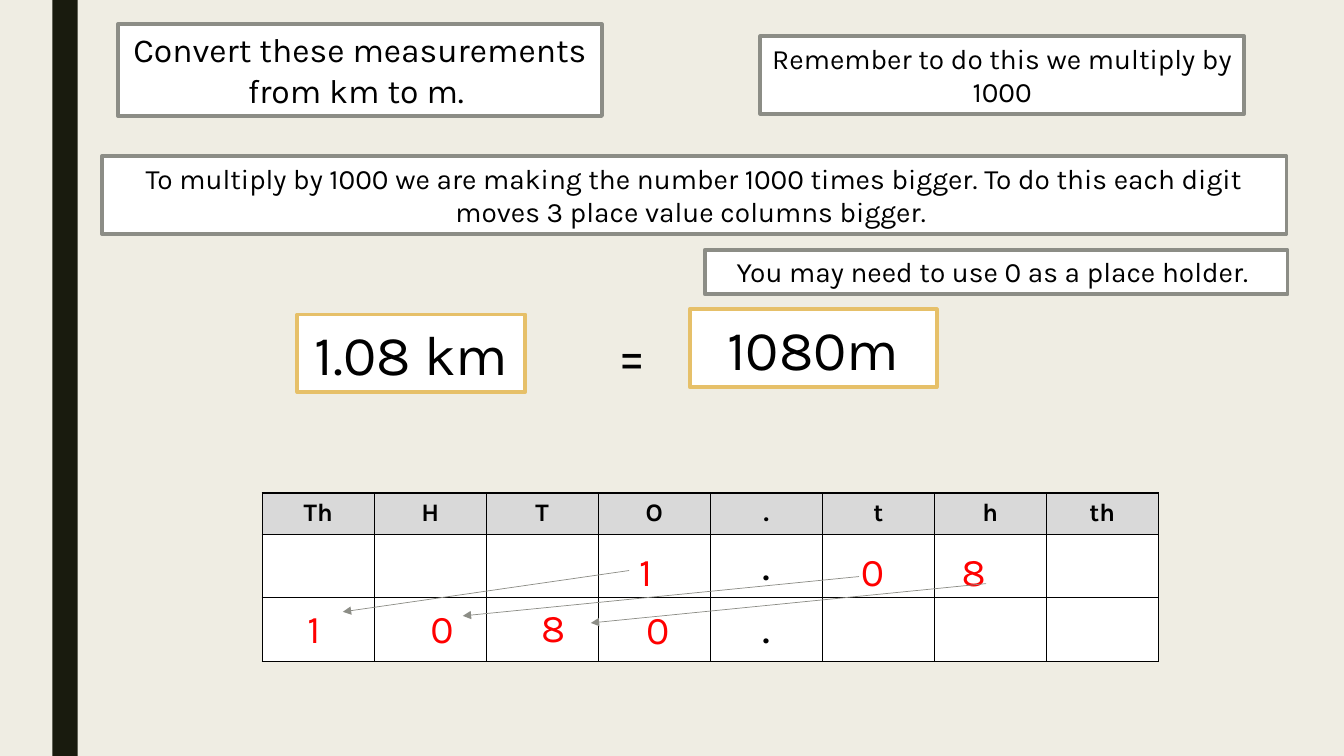
from dataclasses import dataclass

from pptx import Presentation
from pptx import util as u
from pptx.dml.color import RGBColor
from pptx.enum import shapes, text
from pptx.oxml import parse_xml
from pptx.oxml.ns import nsdecls


@dataclass(frozen=True)
class Theme:
    font: str = "Karla"
    paper: str = "EFEDE3"
    bar: str = "191B0E"
    white: str = "FFFFFF"
    black: str = "000000"
    grey: str = "8C8D86"
    gold: str = "E6C069"
    red: str = "FF0000"
    header: str = "D9D9D9"
    title: int = 24
    note: int = 20
    measure: int = 40
    digit: int = 28
    heading: int = 18
    point: int = 32


def rgb(value):
    return RGBColor.from_string(value)


class SlideBuilder:
    def __init__(self, prs, theme):
        self.theme = theme
        self.s = prs.slides.add_slide(prs.slide_layouts[6])
        fill = self.s.background.fill
        fill.solid()
        fill.fore_color.rgb = rgb(theme.paper)

    def add_words(self, tf, words, size, color=None, align=text.PP_ALIGN.CENTER, bold=False):
        p = tf.paragraphs[0]
        p.alignment = align
        r = p.add_run()
        r.text = words
        style = {"name": self.theme.font, "size": u.Pt(size), "bold": bold}
        for name, value in style.items():
            setattr(r.font, name, value)
        r.font.color.rgb = rgb(color or self.theme.black)

    def rect(self, box, fill, line=None):
        sp = self.s.shapes.add_shape(shapes.MSO_SHAPE.RECTANGLE, *map(u.Inches, box))
        sp.shadow.inherit = False
        sp.fill.solid()
        sp.fill.fore_color.rgb = rgb(fill)
        if line:
            sp.line.color.rgb = rgb(line)
            sp.line.width = u.Pt(2.75)
        else:
            sp.line.fill.background()
        return sp

    def label(self, box, words, size, wrap=True, sp=None, **style):
        sp = sp or self.s.shapes.add_textbox(*map(u.Inches, box))
        tf = sp.text_frame
        frame = {
            "word_wrap": wrap,
            "auto_size": text.MSO_AUTO_SIZE.SHAPE_TO_FIT_TEXT,
            "vertical_anchor": text.MSO_ANCHOR.TOP,
        }
        for name, value in frame.items():
            setattr(tf, name, value)
        self.add_words(tf, words, size, **style)

    def card(self, box, words, size, line):
        self.label(box, words, size, sp=self.rect(box, self.theme.white, line))

    def digit(self, left, top, words):
        self.label((left, top, 0.43, 0.57), words, self.theme.digit, wrap=False,
                   color=self.theme.red, align=text.PP_ALIGN.LEFT)

    def arrow(self, start, end):
        cn = self.s.shapes.add_connector(
            shapes.MSO_CONNECTOR.STRAIGHT, *map(u.Inches, start + end))
        cn.line.color.rgb = rgb(self.theme.grey)
        cn.line.width = u.Pt(0.5)
        cn.line._get_or_add_ln().append(
            parse_xml(f'<a:tailEnd {nsdecls("a")} type="triangle"/>'))
        cn._element.spPr.append(parse_xml(f'<a:effectLst {nsdecls("a")}/>'))

    def cell(self, cell, words, header):
        cell.fill.solid()
        cell.fill.fore_color.rgb = rgb(self.theme.header if header else self.theme.white)
        if header:
            cell.vertical_anchor = text.MSO_ANCHOR.MIDDLE
        if words:
            size = self.theme.heading if header else self.theme.point
            self.add_words(cell.text_frame, words, size, bold=header)
        tcPr = cell._tc.get_or_add_tcPr()
        for i, side in enumerate("LRTB"):
            tcPr.insert(i, parse_xml(
                f'<a:ln{side} {nsdecls("a")} w="{u.Pt(1)}"><a:solidFill>'
                f'<a:srgbClr val="{self.theme.black}"/></a:solidFill></a:ln{side}>'))

    def table(self, box, rows, heights):
        tbl = self.s.shapes.add_table(len(rows), len(rows[0]), *map(u.Inches, box)).table
        tbl.first_row = tbl.horz_banding = False
        for row, height in zip(tbl.rows, heights):
            row.height = u.Inches(height)
        for i, row in enumerate(rows):
            for j, words in enumerate(row):
                self.cell(tbl.cell(i, j), words, header=i == 0)


def main():
    prs = Presentation()
    prs.slide_width, prs.slide_height = u.Inches(13.33), u.Inches(7.5)
    t = Theme()
    b = SlideBuilder(prs, t)

    # Side bar
    b.rect((0.52, 0, 0.25, 7.5), t.bar)

    # Place value table
    columns = ["Th", "H", "T", "O", ".", "t", "h", "th"]
    points = [c if c == "." else "" for c in columns]
    b.table((2.6, 4.89, 8.89, 1.67), [columns, points, points], (0.41, 0.63, 0.63))

    # Instructions
    for box, words, size in (
        ((1.17, 0.24, 4.8, 0.91), "Convert these measurements from km to m. ", t.title),
        ((7.54, 0.36, 4.8, 0.77), "Remember to do this we multiply by 1000", t.note),
        ((1.01, 1.55, 11.75, 0.77),
         "To multiply by 1000 we are making the number 1000 times bigger. "
         "To do this each digit moves 3 place value columns bigger. ", t.note),
        ((6.99, 2.48, 5.78, 0.44), "You may need to use 0 as a place holder. ", t.note),
    ):
        b.card(box, words, size, t.grey)

    # Conversion
    b.card((2.95, 3.12, 2.26, 0.77), "1.08 km", t.measure, t.gold)
    b.label((5.36, 3.12, 1.82, 0.77), "=", t.measure)
    b.card((6.84, 3.07, 2.45, 0.77), "1080m", t.measure, t.gold)

    # Digits before and after the move
    for left, top, words in (
        (6.24, 5.38, "1"), (8.44, 5.38, "0"), (9.44, 5.38, "8"),
        (2.95, 5.95, "1"), (4.17, 5.95, "0"), (5.27, 5.94, "8"), (6.31, 5.96, "0"),
    ):
        b.digit(left, top, words)

    # Arrows three columns to the left
    for start, end in (
        ((6.24, 5.66), (3.4, 6.07)),
        ((8.52, 5.72), (4.59, 6.11)),
        ((9.78, 5.79), (5.86, 6.18)),
    ):
        b.arrow(start, end)

    prs.save("out.pptx")


if __name__ == "__main__":
    main()
